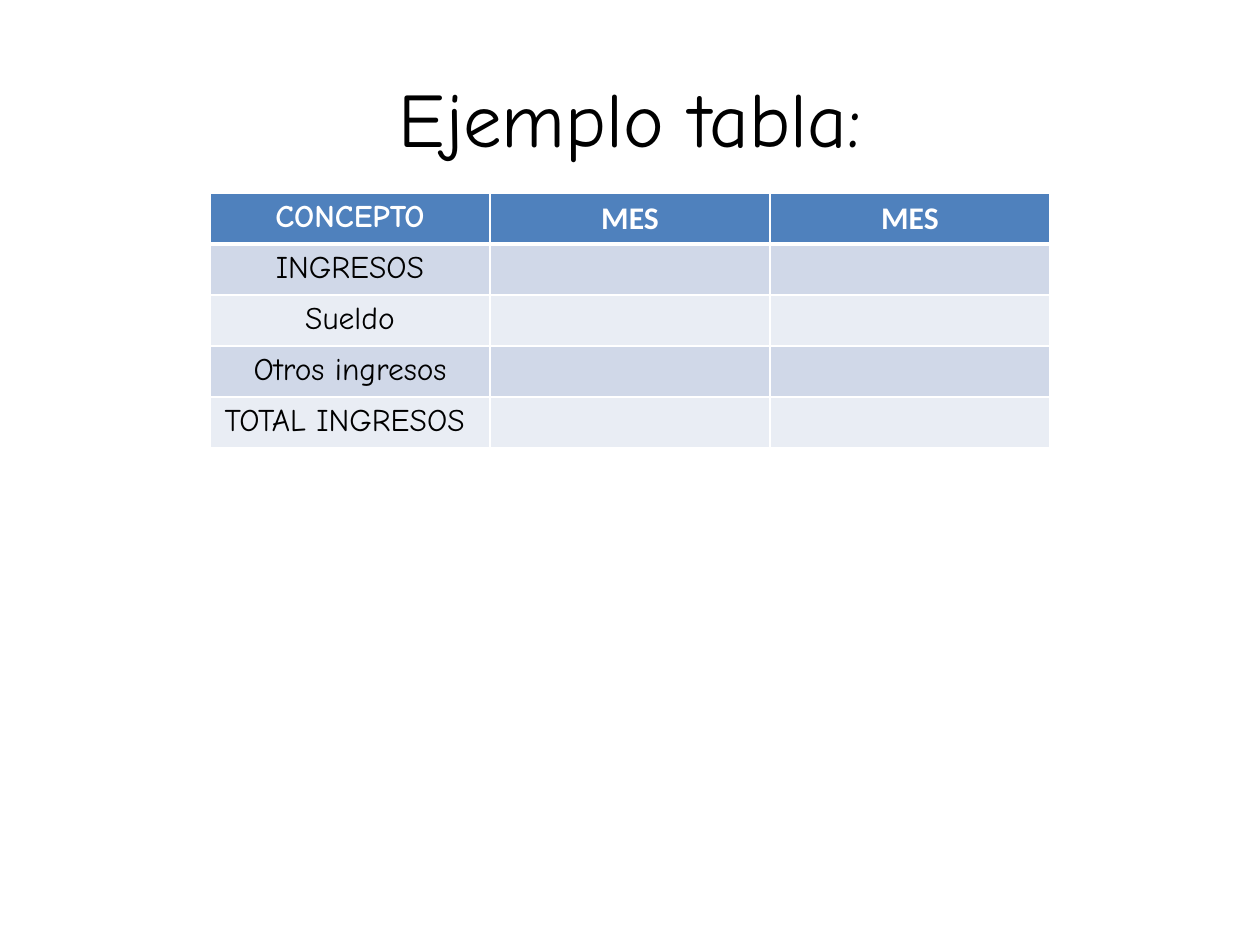
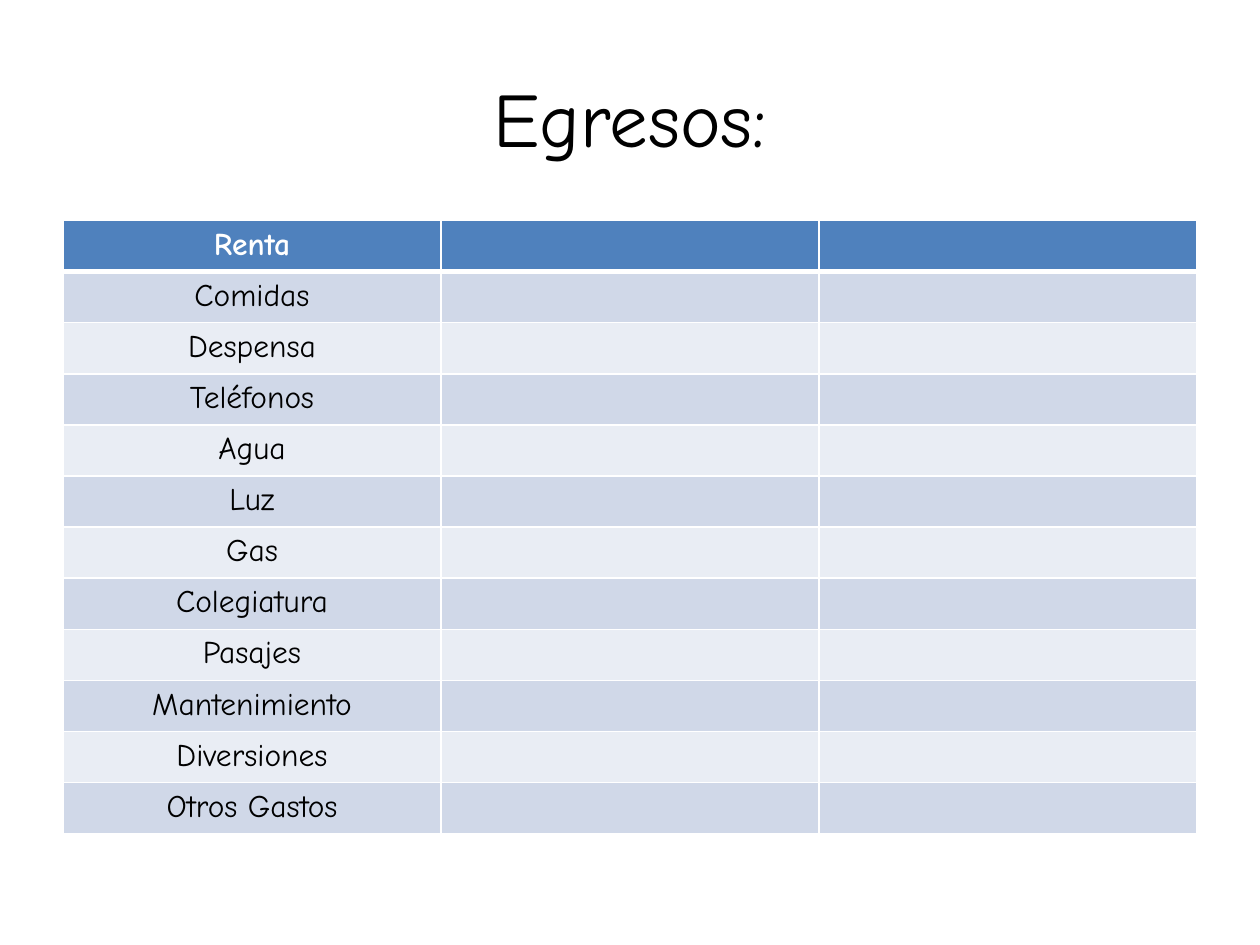
from lxml import etree
from pptx import Presentation
from pptx import util as u
from pptx.dml.color import RGBColor
from pptx.enum import text as t
from pptx.oxml.ns import qn

WIDTH, HEIGHT = u.Inches(10), u.Inches(7.5)
TITLE_ONLY = 5
ROW_HEIGHT = u.Pt(29.2)
COLUMNS = 3
FONT, MONTH_FONT = "Comic Neue", "Calibri"
BLACK, WHITE, HEADER = "000000", "FFFFFF", "4F81BD"
BANDS = ("E9EDF4", "D0D8E8")
THIN, THICK = 1, 3

INCOME = [
    ("CONCEPTO", "MES", "MES"),
    ("INGRESOS",),
    ("Sueldo",),
    ("Otros ingresos",),
    ("TOTAL INGRESOS ",),
]
EXPENSES = [(name,) for name in (
    "Renta", "Comidas", "Despensa", "Teléfonos", "Agua", "Luz", "Gas",
    "Colegiatura", "Pasajes", "Mantenimiento", "Diversiones", "Otros Gastos",
)]


def color(value):
    return RGBColor.from_string(value)


def write(frame, words, size=18, font=FONT, fill=BLACK, bold=False):
    paragraph = frame.paragraphs[0]
    paragraph.alignment = t.PP_ALIGN.CENTER
    run = paragraph.add_run()
    run.text = words
    run.font.size = u.Pt(size)
    run.font.name = font
    run.font.bold = bold
    run.font.color.rgb = color(fill)


def set_borders(cell, top, bottom):
    properties = cell._tc.get_or_add_tcPr()
    widths = {"a:lnL": THIN, "a:lnR": THIN, "a:lnT": top, "a:lnB": bottom}
    for position, (side, width) in enumerate(widths.items()):
        line = etree.Element(qn(side), w=str(u.Pt(width)))
        solid = etree.SubElement(line, qn("a:solidFill"))
        etree.SubElement(solid, qn("a:srgbClr"), val=WHITE)
        properties.insert(position, line)


def add_titled_slide(presentation, title):
    slide = presentation.slides.add_slide(presentation.slide_layouts[TITLE_ONLY])
    shape = slide.shapes.title
    shape.left, shape.top = int(WIDTH * 0.05), int(HEIGHT * 0.04)
    shape.width, shape.height = int(WIDTH * 0.9), u.Inches(1.25)
    shape.text_frame.vertical_anchor = t.MSO_ANCHOR.MIDDLE
    write(shape.text_frame, title, size=44)
    return slide


def add_budget_table(slide, rows, top, width):
    left = (WIDTH - width) // 2
    table = slide.shapes.add_table(
        len(rows), COLUMNS, left, top, width, ROW_HEIGHT * len(rows)).table
    for row_index, labels in enumerate(rows):
        table.rows[row_index].height = ROW_HEIGHT
        header = row_index == 0
        for column in range(COLUMNS):
            cell = table.cell(row_index, column)
            cell.fill.solid()
            cell.fill.fore_color.rgb = color(HEADER if header else BANDS[row_index % 2])
            set_borders(cell, top=THICK if row_index == 1 else THIN,
                        bottom=THICK if header else THIN)
            if column < len(labels):
                write(cell.text_frame, labels[column],
                      font=MONTH_FONT if column else FONT,
                      fill=WHITE if header else BLACK, bold=header)


def main():
    presentation = Presentation()
    presentation.slide_width, presentation.slide_height = WIDTH, HEIGHT
    income = add_titled_slide(presentation, "Ejemplo tabla:")
    add_budget_table(income, INCOME, top=u.Inches(1.53), width=WIDTH * 2 // 3)
    expenses = add_titled_slide(presentation, "Egresos:")
    add_budget_table(expenses, EXPENSES, top=u.Inches(1.75), width=int(WIDTH * 0.9))
    presentation.save("out.pptx")


if __name__ == "__main__":
    main()
